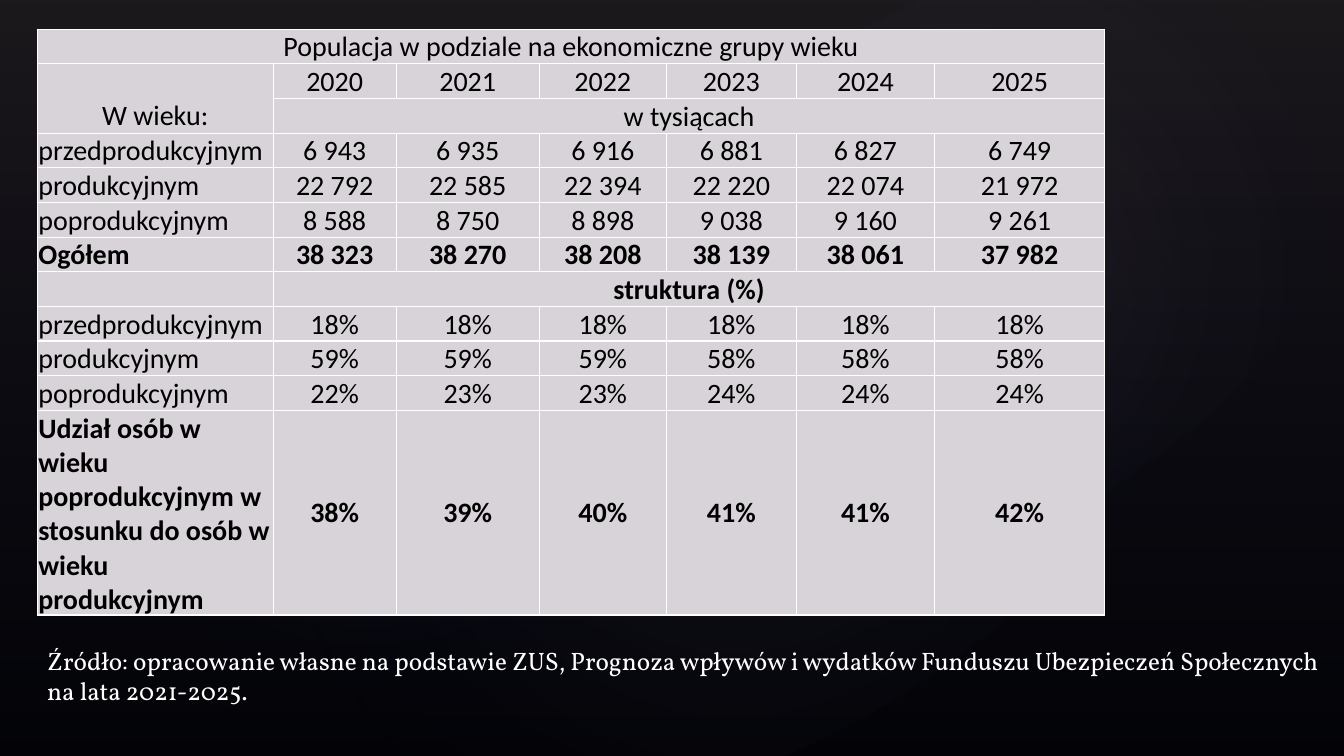
from dataclasses import dataclass

from pptx import Presentation
from pptx.dml.color import RGBColor
from pptx.enum.shapes import MSO_SHAPE
from pptx.enum.text import MSO_ANCHOR, MSO_AUTO_SIZE, PP_ALIGN
from pptx.oxml import parse_xml
from pptx.oxml.ns import nsdecls
from pptx.util import Inches, Pt

RECT, OVAL = MSO_SHAPE.RECTANGLE, MSO_SHAPE.OVAL
LEFT, CENTER = PP_ALIGN.LEFT, PP_ALIGN.CENTER
BOTTOM, MIDDLE = MSO_ANCHOR.BOTTOM, MSO_ANCHOR.MIDDLE
GROW = MSO_AUTO_SIZE.SHAPE_TO_FIT_TEXT

BLACK = RGBColor(0x00, 0x00, 0x00)
WHITE = RGBColor(0xFF, 0xFF, 0xFF)
CELL_FILL = RGBColor(0xD8, 0xD3, 0xD9)
PLUM = RGBColor(0x50, 0x46, 0x52)
NAVY = RGBColor(0x24, 0x28, 0x52)
LILAC = RGBColor(0xC4, 0xBC, 0xC6)

LINEAR = '<a:lin ang="5400000" scaled="0"/>'
RADIAL = ('<a:path path="circle"><a:fillToRect l="50000" t="50000" '
          'r="50000" b="50000"/></a:path>')


@dataclass
class Stop:
    position: int
    color: RGBColor
    opacity: int


@dataclass
class Glow:
    left: float
    top: float
    width: float
    height: float
    rotation: float
    opacity: int


@dataclass
class Row:
    label: str
    values: list[str]
    bold: bool = False
    label_align: PP_ALIGN = LEFT
    value_anchor: MSO_ANCHOR = BOTTOM


GLOWS = [
    Glow(2, 1.14, 10.56, 6.24, 328.7, 7),
    Glow(0.61, 0.46, 6.06, 6.53, 294.3, 8),
    Glow(4.78, 0.13, 9.45, 5.2, 328.7, 8),
]
COLUMN_WIDTHS = [2.34, 1.22, 1.42, 1.26, 1.29, 1.37, 1.69]
ROW_HEIGHT, LAST_ROW_HEIGHT = 0.34, 2.03

ROWS = [
    Row("Populacja w podziale na ekonomiczne grupy wieku", [], label_align=CENTER),
    Row("W wieku:", ["2020", "2021", "2022", "2023", "2024", "2025"], label_align=CENTER),
    Row("", ["w tysiącach"]),
    Row("przedprodukcyjnym", ["6 943", "6 935", "6 916", "6 881", "6 827", "6 749"]),
    Row("produkcyjnym", ["22 792", "22 585", "22 394", "22 220", "22 074", "21 972"]),
    Row("poprodukcyjnym", ["8 588", "8 750", "8 898", "9 038", "9 160", "9 261"]),
    Row("Ogółem", ["38 323", "38 270", "38 208", "38 139", "38 061", "37 982"], bold=True),
    Row("", ["struktura (%)"], bold=True),
    Row("przedprodukcyjnym", ["18%"] * 6, value_anchor=MIDDLE),
    Row("produkcyjnym", ["59%"] * 3 + ["58%"] * 3, value_anchor=MIDDLE),
    Row("poprodukcyjnym", ["22%"] + ["23%"] * 2 + ["24%"] * 3, value_anchor=MIDDLE),
    Row("Udział osób w wieku poprodukcyjnym w stosunku do osób w wieku produkcyjnym",
        ["38%", "39%", "40%", "41%", "41%", "42%"], bold=True, value_anchor=MIDDLE),
]
# First row, first column, last row, last column
MERGES = [(0, 0, 0, 6), (1, 0, 2, 0), (2, 1, 2, 6), (7, 1, 7, 6)]


def fill_gradient(sp, stops: list[Stop], direction: str) -> None:
    """Give a shape a translucent gradient, with no outline or shadow."""
    marks = "".join(
        f'<a:gs pos="{s.position * 1000}"><a:srgbClr val="{s.color}">'
        f'<a:alpha val="{s.opacity * 1000}"/></a:srgbClr></a:gs>' for s in stops)
    sp._element.spPr.append(parse_xml(
        f'<a:gradFill {nsdecls("a")} rotWithShape="1">'
        f'<a:gsLst>{marks}</a:gsLst>{direction}</a:gradFill>'))
    sp.line.fill.background()
    sp.shadow.inherit = False


def add_background(prs, slide) -> None:
    slide.background.fill.solid()
    slide.background.fill.fore_color.rgb = BLACK
    sp = slide.shapes.add_shape(RECT, 0, 0, prs.slide_width, prs.slide_height)
    fill_gradient(sp, [Stop(0, PLUM, 36), Stop(100, NAVY, 10)], LINEAR)
    for glow in GLOWS:
        sp = slide.shapes.add_shape(OVAL, Inches(glow.left), Inches(glow.top),
                                    Inches(glow.width), Inches(glow.height))
        sp.rotation = glow.rotation
        fill_gradient(sp, [Stop(0, LILAC, glow.opacity), Stop(58, NAVY, 0)], RADIAL)


def add_run(p, text: str, font: str, size: int, color: RGBColor, bold: bool = False) -> None:
    r = p.add_run()
    r.text = text
    r.font.name = font
    r.font.size = Pt(size)
    r.font.color.rgb = color
    r.font.bold = bold


def format_cell(cell) -> None:
    """Set the margins, white borders and fill of a cell."""
    cell.margin_left = cell.margin_right = cell.margin_top = Inches(0.01)
    cell.margin_bottom = 0
    tc_pr = cell._tc.get_or_add_tcPr()
    for side in ("lnL", "lnR", "lnT", "lnB"):
        tc_pr.append(parse_xml(
            f'<a:{side} {nsdecls("a")} w="{Pt(1)}"><a:solidFill>'
            f'<a:srgbClr val="{WHITE}"/></a:solidFill></a:{side}>'))
    cell.fill.solid()
    cell.fill.fore_color.rgb = CELL_FILL


def write_cell(cell, text: str, align: PP_ALIGN, anchor: MSO_ANCHOR, bold: bool) -> None:
    cell.vertical_anchor = anchor
    p = cell.text_frame.paragraphs[0]
    p.alignment = align
    if text:
        add_run(p, text, "Calibri", 20, BLACK, bold)


def add_population_table(slide) -> None:
    heights = [ROW_HEIGHT] * (len(ROWS) - 1) + [LAST_ROW_HEIGHT]
    table = slide.shapes.add_table(
        len(ROWS), len(COLUMN_WIDTHS), Inches(0.37), Inches(0.29),
        Inches(sum(COLUMN_WIDTHS)), Inches(sum(heights))).table
    table.first_row = table.horz_banding = False
    for column, width in zip(table.columns, COLUMN_WIDTHS):
        column.width = Inches(width)
    for row, height in zip(table.rows, heights):
        row.height = Inches(height)
    for cell in table.iter_cells():
        format_cell(cell)
    for top, left, bottom, right in MERGES:
        table.cell(top, left).merge(table.cell(bottom, right))
    for i, row in enumerate(ROWS):
        write_cell(table.cell(i, 0), row.label, row.label_align, BOTTOM, row.bold)
        for j, value in enumerate(row.values, start=1):
            write_cell(table.cell(i, j), value, CENTER, row.value_anchor, row.bold)


def add_source_note(slide) -> None:
    tf = slide.shapes.add_textbox(Inches(0.37), Inches(6.35),
                                  Inches(12.97), Inches(0.71)).text_frame
    tf.word_wrap = True
    tf.auto_size = GROW
    add_run(tf.paragraphs[0],
            "Źródło: opracowanie własne na podstawie ZUS, Prognoza wpływów i wydatków "
            "Funduszu Ubezpieczeń Społecznych na lata 2021-2025.", "Vollkorn", 18, WHITE)


def main() -> None:
    prs = Presentation()
    prs.slide_width, prs.slide_height = Inches(13.33), Inches(7.5)
    slide = prs.slides.add_slide(prs.slide_layouts[6])
    add_background(prs, slide)
    add_source_note(slide)
    add_population_table(slide)
    prs.save("out.pptx")


if __name__ == "__main__":
    main()
